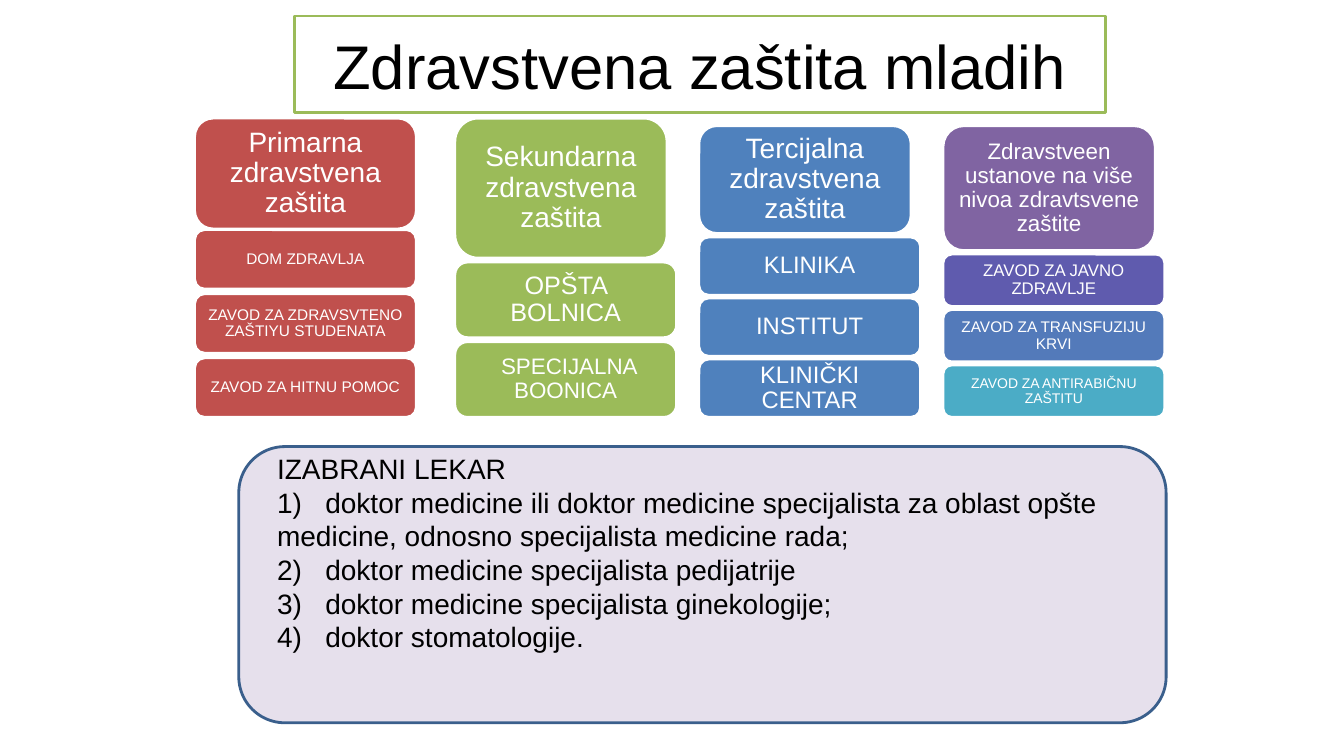
from dataclasses import dataclass

from lxml import etree
from pptx import Presentation
from pptx import util as u
from pptx.dml.color import RGBColor
from pptx.enum import shapes, text
from pptx.oxml.ns import qn
from pptx.shapes.autoshape import Shape
from pptx.slide import Slide


@dataclass(frozen=True)
class Theme:
    """Colours, font and type sizes of the slide."""
    font: str = "Arial"
    black: str = "000000"
    white: str = "FFFFFF"
    red: str = "C0504D"
    green: str = "9BBB59"
    blue: str = "4F81BD"
    purple: str = "8064A2"
    indigo: str = "5F5BAE"
    steel: str = "537ABA"
    aqua: str = "4BACC6"
    lilac: str = "E6E0EC"
    navy: str = "3A5F8C"
    title_size: float = 44
    body_size: float = 20
    line_width: float = 2


@dataclass(frozen=True)
class Card:
    """One rounded label with its type size and fill."""
    label: str
    size: float
    fill: str


@dataclass(frozen=True)
class Level:
    """One column of care: a heading card above equal institution cards."""
    left: float
    top: float
    head_width: float
    head_height: float
    card_height: float
    gap: float
    head: Card
    cards: tuple[Card, ...]


THEME = Theme()
CARD_WIDTH = 158.4
CARDS_BOTTOM = 298.1
NUMBER_TAB = 34.5

LEVELS = (
    Level(139, 84.4, 158.4, 79.2, 42.5, 3.3,
          Card("Primarna zdravstvena zaštita", 20, THEME.red),
          (Card("DOM ZDRAVLJA", 11, THEME.red),
           Card("ZAVOD ZA ZDRAVSVTENO ZAŠTIYU STUDENATA", 11, THEME.red),
           Card("ZAVOD ZA HITNU POMOC", 11, THEME.red))),
    Level(324.9, 84.4, 151.6, 100, 54, 2.9,
          Card("Sekundarna zdravstvena zaštita", 20, THEME.green),
          (Card("OPŠTA BOLNICA", 18, THEME.green),
           Card(" SPECIJALNA BOONICA", 16, THEME.green))),
    Level(499.2, 89.8, 151.6, 77, 41.6, 2,
          Card("Tercijalna zdravstvena zaštita", 20, THEME.blue),
          (Card("KLINIKA", 17, THEME.blue),
           Card("INSTITUT", 17, THEME.blue),
           Card("KLINIČKI CENTAR", 17, THEME.blue))),
    Level(673.6, 89.8, 151.6, 89.2, 37.4, 2.2,
          Card("Zdravstveen ustanove na više nivoa zdravtsvene zaštite", 16, THEME.purple),
          (Card("ZAVOD ZA JAVNO ZDRAVLJE", 12, THEME.indigo),
           Card("ZAVOD ZA TRANSFUZIJU KRVI", 11, THEME.steel),
           Card("ZAVOD ZA ANTIRABIČNU ZAŠTITU", 10, THEME.aqua))),
)

DOCTORS = (
    "doktor medicine ili doktor medicine specijalista za oblast opšte medicine, "
    "odnosno specijalista medicine rada;",
    "doktor medicine specijalista pedijatrije",
    "doktor medicine specijalista ginekologije;",
    "doktor stomatologije.",
)


def add_block(page: Slide, left: float, top: float, width: float, height: float, *,
              fill: str, line: str, rounded: bool = True) -> Shape:
    """Draw a filled and outlined rectangle without a shadow."""
    kind = shapes.MSO_SHAPE.ROUNDED_RECTANGLE if rounded else shapes.MSO_SHAPE.RECTANGLE
    box = page.shapes.add_shape(kind, *map(u.Pt, (left, top, width, height)))
    box.shadow.inherit = False
    box.fill.solid()
    box.fill.fore_color.rgb = RGBColor.from_string(fill)
    box.line.color.rgb = RGBColor.from_string(line)
    box.line.width = u.Pt(THEME.line_width)
    return box


def write(box: Shape, *lines: str, size: float, color: str, centred: bool = True,
          spacing: float = 1, tab: float = 0) -> None:
    """Fill a box with one formatted paragraph per line."""
    frame = box.text_frame
    frame.word_wrap = True
    frame.vertical_anchor = text.MSO_ANCHOR.MIDDLE if centred else text.MSO_ANCHOR.TOP
    for index, line in enumerate(lines):
        para = frame.paragraphs[0] if index == 0 else frame.add_paragraph()
        para.alignment = text.PP_ALIGN.CENTER if centred else text.PP_ALIGN.LEFT
        para.line_spacing = spacing
        if tab:
            stops = etree.SubElement(para._p.get_or_add_pPr(), qn("a:tabLst"))
            etree.SubElement(stops, qn("a:tab"), pos=str(u.Pt(tab)), algn="l")
        span = para.add_run()
        span.text = line
        span.font.name = THEME.font
        span.font.size = u.Pt(size)
        span.font.color.rgb = RGBColor.from_string(color)


def add_card(page: Slide, card: Card, left: float, top: float,
             width: float, height: float) -> None:
    """Draw a card whose margins grow with its type size."""
    box = add_block(page, left, top, width, height, fill=card.fill, line=THEME.white)
    frame = box.text_frame
    frame.margin_left = frame.margin_right = u.Pt(0.3 * card.size)
    frame.margin_top = frame.margin_bottom = u.Pt(0.15 * card.size)
    write(box, card.label, size=card.size, color=THEME.white, spacing=0.9)


def add_level(page: Slide, level: Level) -> None:
    """Draw a heading and stack its cards down to the shared bottom edge."""
    add_card(page, level.head, level.left, level.top, level.head_width, level.head_height)
    pitch = level.card_height + level.gap
    first_top = CARDS_BOTTOM + level.gap - len(level.cards) * pitch
    for index, card in enumerate(level.cards):
        add_card(page, card, level.left, first_top + index * pitch,
                 CARD_WIDTH, level.card_height)


def add_doctor_panel(page: Slide) -> None:
    """Draw the panel that lists the chosen doctors."""
    add_block(page, 170.6, 319, 662.4, 197.3, fill=THEME.lilac, line=THEME.navy)
    box = page.shapes.add_textbox(*map(u.Pt, (190.8, 319, 642.2, 177.1)))
    numbered = (f"{number})\t{doctor}" for number, doctor in enumerate(DOCTORS, 1))
    write(box, "IZABRANI LEKAR", *numbered, size=THEME.body_size, color=THEME.black,
          centred=False, tab=NUMBER_TAB)


def main() -> None:
    """Build the slide and save the deck."""
    deck = Presentation()
    deck.slide_width, deck.slide_height = u.Pt(960), u.Pt(540)
    page = deck.slides.add_slide(deck.slide_layouts[6])
    add_doctor_panel(page)
    for level in LEVELS:
        add_level(page, level)
    title = add_block(page, 210.2, 11.5, 579.6, 69.1, fill=THEME.white,
                      line=THEME.green, rounded=False)
    write(title, "Zdravstvena zaštita mladih", size=THEME.title_size, color=THEME.black)
    deck.save("out.pptx")


if __name__ == "__main__":
    main()
